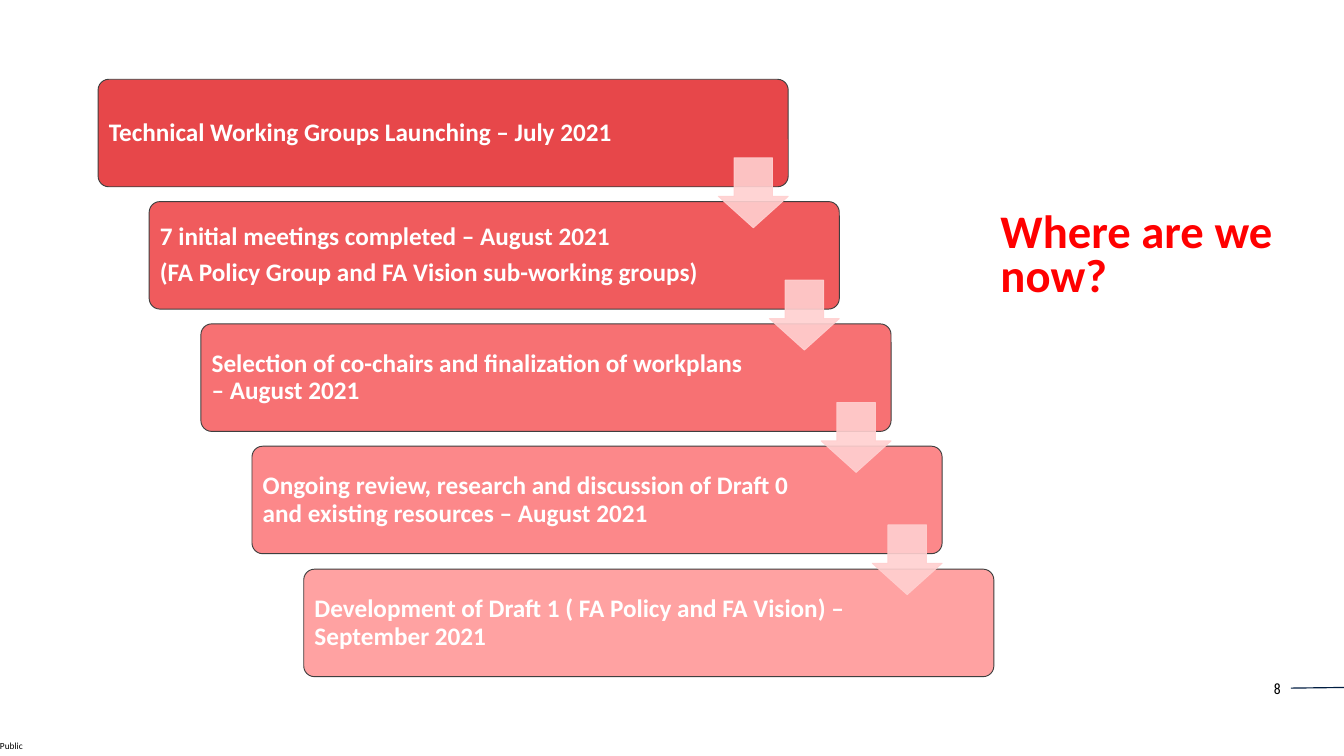
from lxml import etree
from pptx import Presentation
from pptx.dml.color import RGBColor
from pptx.enum.shapes import MSO_CONNECTOR, MSO_SHAPE
from pptx.enum.text import MSO_ANCHOR, PP_ALIGN
from pptx.oxml.ns import qn
from pptx.util import Pt

ROUNDED, DOWN_ARROW = MSO_SHAPE.ROUNDED_RECTANGLE, MSO_SHAPE.DOWN_ARROW
STRAIGHT = MSO_CONNECTOR.STRAIGHT
TOP, MIDDLE = MSO_ANCHOR.TOP, MSO_ANCHOR.MIDDLE
LEFT, RIGHT = PP_ALIGN.LEFT, PP_ALIGN.RIGHT

PX = 9144  # EMU per px, 100 px to the inch

THEME = {
    "body_font": "Calibri", "number_font": "Roboto Condensed",
    "title": "FF0000", "text": "000000", "step_text": "FFFFFF",
    "steps": ["E7474A", "F05B5D", "F77173", "FC888A", "FFA2A2"],
    "step_line": "3F3F3F", "arrow": "FFD0D0", "rule": "001D41",
    "title_size": 50, "step_size": 27, "number_size": 16, "label_size": 10,
}

STEPS = [
    ["Technical Working Groups Launching – July 2021"],
    ["7 initial meetings completed – August 2021",
     "(FA Policy Group and FA Vision sub-working groups)"],
    ["Selection of co-chairs and finalization of workplans – August 2021"],
    ["Ongoing review, research and discussion of Draft 0 and existing resources – August 2021"],
    ["Development of Draft 1 ( FA Policy and FA Vision) – September 2021"],
]

prs = Presentation()
prs.slide_width, prs.slide_height = 2000 * PX, 1125 * PX
slide = prs.slides.add_slide(prs.slide_layouts[6])


def add_text(box, lines, size, color, font="body_font", bold=False, anchor=TOP,
             inset=(10, 5), paragraph_format=None):
    area = slide.shapes.add_textbox(*(v * PX for v in box))
    frame = area.text_frame
    side, end = (v * PX for v in inset)
    frame_format = {"word_wrap": True, "vertical_anchor": anchor, "margin_left": side,
                    "margin_right": side, "margin_top": end, "margin_bottom": end}
    for name, value in frame_format.items():
        setattr(frame, name, value)
    frame.text = "\n".join(lines)
    font_format = {"name": THEME[font], "size": Pt(THEME[size]), "bold": bold}
    for paragraph in frame.paragraphs:
        for name, value in (paragraph_format or {}).items():
            setattr(paragraph, name, value)
        for run in paragraph.runs:
            for name, value in font_format.items():
                setattr(run.font, name, value)
            run.font.color.rgb = RGBColor.from_string(THEME[color])


def add_block(kind, box, adjustments, fill, line, opacity=100):
    block = slide.shapes.add_shape(kind, *(v * PX for v in box))
    block.shadow.inherit = False
    for i, value in enumerate(adjustments):
        block.adjustments[i] = value
    block.fill.solid()
    block.fill.fore_color.rgb = RGBColor.from_string(fill)
    block.line.color.rgb = RGBColor.from_string(line)
    block.line.width = Pt(1)
    if opacity < 100:
        for color in block.fill._xPr.iter(qn("a:srgbClr")):
            etree.SubElement(color, qn("a:alpha"), val=str(opacity * 1000))


# Footer: classification label, page number and rule
add_text((0, 1096, 64, 29), ["Public"], "label_size", "text", anchor=MIDDLE, inset=(0, 0))
add_text((1844, 1006, 72, 37), ["8"], "number_size", "text", font="number_font",
         paragraph_format={"alignment": RIGHT})
rule = slide.shapes.add_connector(STRAIGHT, 1921 * PX, 1024 * PX, 2000 * PX, 1023 * PX)
rule.line.color.rgb = RGBColor.from_string(THEME["rule"])
rule.line.width = Pt(1.25)
etree.SubElement(rule._element.spPr, qn("a:effectLst"))

# Title
add_text((1479, 311, 443, 158), ["Where are we now?"], "title_size", "title", bold=True,
         paragraph_format={"alignment": LEFT, "line_spacing": 0.8})

# Staircase of steps, spread evenly from the first corner to the last
step_w, step_h, arrow_size = 1027, 160, 104
last = len(STEPS) - 1
corners = [(146 + 306 * i // last, 118 + 729 * i // last) for i in range(len(STEPS))]
step_format = {"alignment": LEFT, "line_spacing": 0.9, "space_after": Pt(9.45)}
for (x, y), lines, fill in zip(corners, STEPS, THEME["steps"]):
    add_block(ROUNDED, (x, y, step_w, step_h), [0.1], fill, THEME["step_line"])
    add_text((x + 5, y + 5, 837, 151), lines, "step_size", "step_text", bold=True,
             anchor=MIDDLE, inset=(11, 11), paragraph_format=step_format)

# Arrows, flush with the right edge of the step they leave
for x, y in corners[:-1]:
    add_block(DOWN_ARROW, (x + step_w - arrow_size, y + 117, arrow_size, arrow_size),
              [0.45, 0.55], THEME["arrow"], THEME["arrow"], opacity=90)

# The listing gives the arrow's shaft width first, then its head length
for shape in slide.shapes:
    if shape.shape_type == 1 and shape.auto_shape_type == DOWN_ARROW:
        shape.adjustments[0], shape.adjustments[1] = 0.55, 0.45

prs.save("out.pptx")
